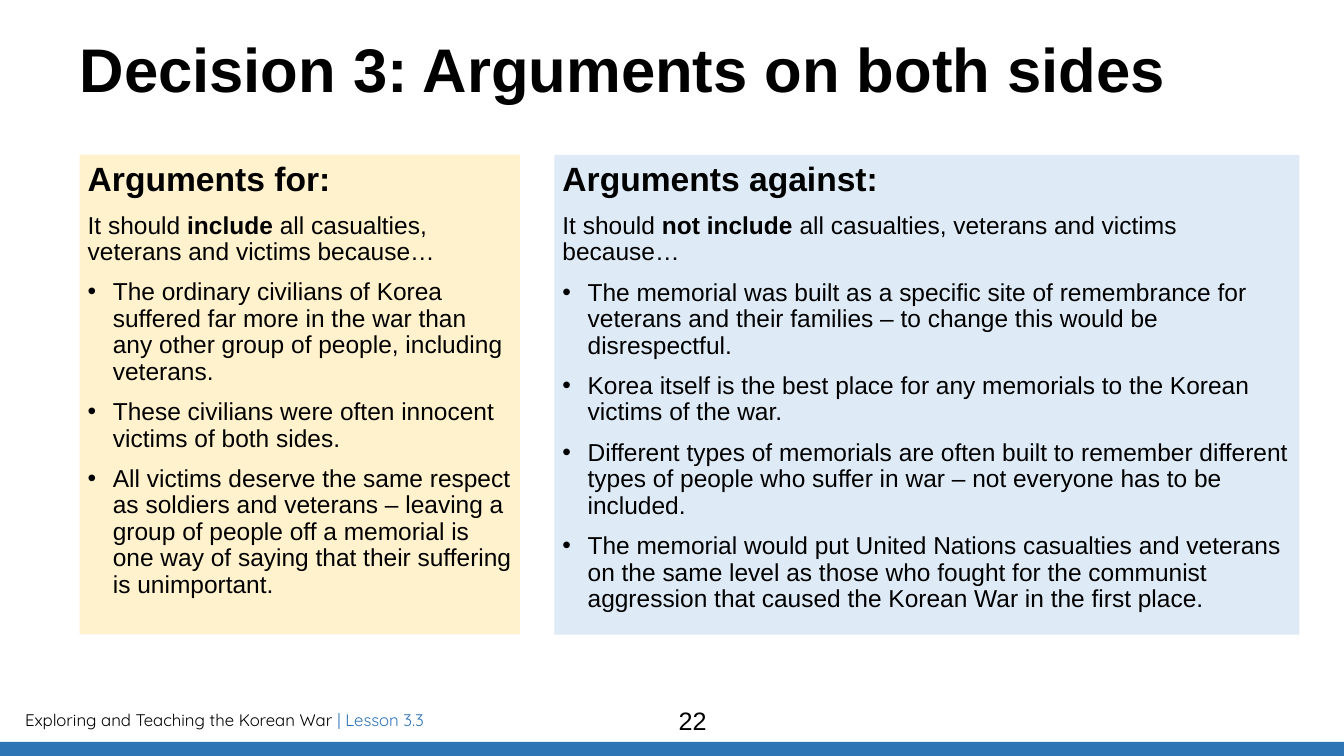
"""Build the slide on arguments for and against Decision 3."""
from dataclasses import dataclass

from lxml import etree
from pptx import Presentation
from pptx.dml.color import RGBColor
from pptx.enum.shapes import MSO_SHAPE
from pptx.enum.text import MSO_ANCHOR, MSO_AUTO_SIZE, PP_ALIGN
from pptx.oxml.ns import qn
from pptx.util import Pt

RECT = MSO_SHAPE.RECTANGLE
TOP = MSO_ANCHOR.TOP
FIXED = MSO_AUTO_SIZE.NONE
LEFT, CENTER = PP_ALIGN.LEFT, PP_ALIGN.CENTER
BLACK = RGBColor(0x00, 0x00, 0x00)
BLUE = RGBColor(0x2E, 0x75, 0xB6)
CREAM = RGBColor(0xFF, 0xF2, 0xCC)
PALE = RGBColor(0xDE, 0xEB, 0xF7)
INSET = 5.76
INDENT = Pt(18)


@dataclass
class Box:
    left: float
    top: float
    width: float
    height: float

    def place(self) -> tuple:
        return Pt(self.left), Pt(self.top), Pt(self.width), Pt(self.height)


@dataclass
class Panel:
    box: Box
    fill: RGBColor
    head: str
    stress: str
    points: list[str]


PANELS = [
    Panel(Box(56.9, 110.4, 314.6, 342.7), CREAM, "Arguments for:", "include ", [
        "The ordinary civilians of Korea suffered far more in the war than any "
        "other group of people, including veterans.",
        "These civilians were often innocent victims of both sides.",
        "All victims deserve the same respect as soldiers and veterans – leaving "
        "a group of people off a memorial is one way of saying that their "
        "suffering is unimportant.",
    ]),
    Panel(Box(396, 110.6, 532.1, 342.7), PALE, "Arguments against:", "not include ", [
        "The memorial was built as a specific site of remembrance for veterans "
        "and their families – to change this would be disrespectful.",
        "Korea itself is the best place for any memorials to the Korean victims "
        "of the war.",
        "Different types of memorials are often built to remember different types "
        "of people who suffer in war – not everyone has to be included.",
        "The memorial would put United Nations casualties and veterans on the "
        "same level as those who fought for the communist aggression that caused "
        "the Korean War in the first place.",
    ]),
]


def style(para, size: float, bold: bool = False, face: str = "Arial") -> None:
    font = para.font
    font.size, font.name = Pt(size), face
    font.bold = bold
    font.color.rgb = BLACK


def margins(frame, side: float, top: float) -> None:
    frame.margin_left = frame.margin_right = Pt(side)
    frame.margin_top, frame.margin_bottom = Pt(top), 0
    frame.vertical_anchor = TOP
    frame.word_wrap = True


def add_rect(slide, box: Box, fill: RGBColor):
    rect = slide.shapes.add_shape(RECT, *box.place())
    rect.shadow.inherit = False
    rect.fill.solid()
    rect.fill.fore_color.rgb = fill
    rect.line.fill.background()
    return rect


def add_line(slide, box: Box):
    frame = slide.shapes.add_textbox(*box.place()).text_frame
    frame.word_wrap = True
    return frame.paragraphs[0]


def add_para(frame):
    para = frame.add_paragraph()
    para.alignment = LEFT
    para.line_spacing = 0.9
    para.space_before = Pt(10)
    return para


def add_bullet(para) -> None:
    props = para._p.get_or_add_pPr()
    props.set("marL", str(INDENT))
    props.set("indent", str(-INDENT))
    etree.SubElement(props, qn("a:buFont"), typeface="Arial")
    etree.SubElement(props, qn("a:buChar"), char="•")


def add_panel(slide, panel: Panel) -> None:
    frame = add_rect(slide, panel.box, panel.fill).text_frame
    margins(frame, INSET, INSET)
    head = frame.paragraphs[0]
    head.text = panel.head
    head.alignment = LEFT
    head.line_spacing = 0.9
    style(head, 24, True)
    lead = add_para(frame)
    style(lead, 17.5)
    for text, bold in (("It should ", False), (panel.stress, True),
                       ("all casualties, veterans and victims because…", False)):
        run = lead.add_run()
        run.text, run.font.bold = text, bold
    for point in panel.points:
        para = add_para(frame)
        para.text = point
        add_bullet(para)
        style(para, 17.5)


def add_title(slide) -> None:
    title = slide.shapes.title
    title.left, title.top, title.width, title.height = Box(56.9, 28.1, 828, 80.6).place()
    frame = title.text_frame
    margins(frame, 0, 0)
    frame.auto_size = FIXED
    para = frame.paragraphs[0]
    para.text = "Decision 3: Arguments on both sides"
    para.alignment = LEFT
    para.line_spacing = 0.9
    style(para, 44, True)


def add_footer(slide) -> None:
    note = add_line(slide, Box(10.8, 503.3, 563, 21.6))
    style(note, 12, face="Quicksand")
    note.add_run().text = "Exploring and Teaching the Korean War "
    lesson = note.add_run()
    lesson.text = "| Lesson 3.3"
    lesson.font.color.rgb = BLUE
    add_rect(slide, Box(0, 529.9, 960, 10.1), BLUE)
    page = add_line(slide, Box(311.8, 500.4, 365.8, 28.8))
    page.text = "22"
    page.alignment = CENTER
    style(page, 18)


def main() -> None:
    deck = Presentation()
    deck.slide_width, deck.slide_height = Pt(960), Pt(540)
    slide = deck.slides.add_slide(deck.slide_layouts[5])
    add_title(slide)
    for panel in PANELS:
        add_panel(slide, panel)
    add_footer(slide)
    deck.save("out.pptx")


if __name__ == "__main__":
    main()
